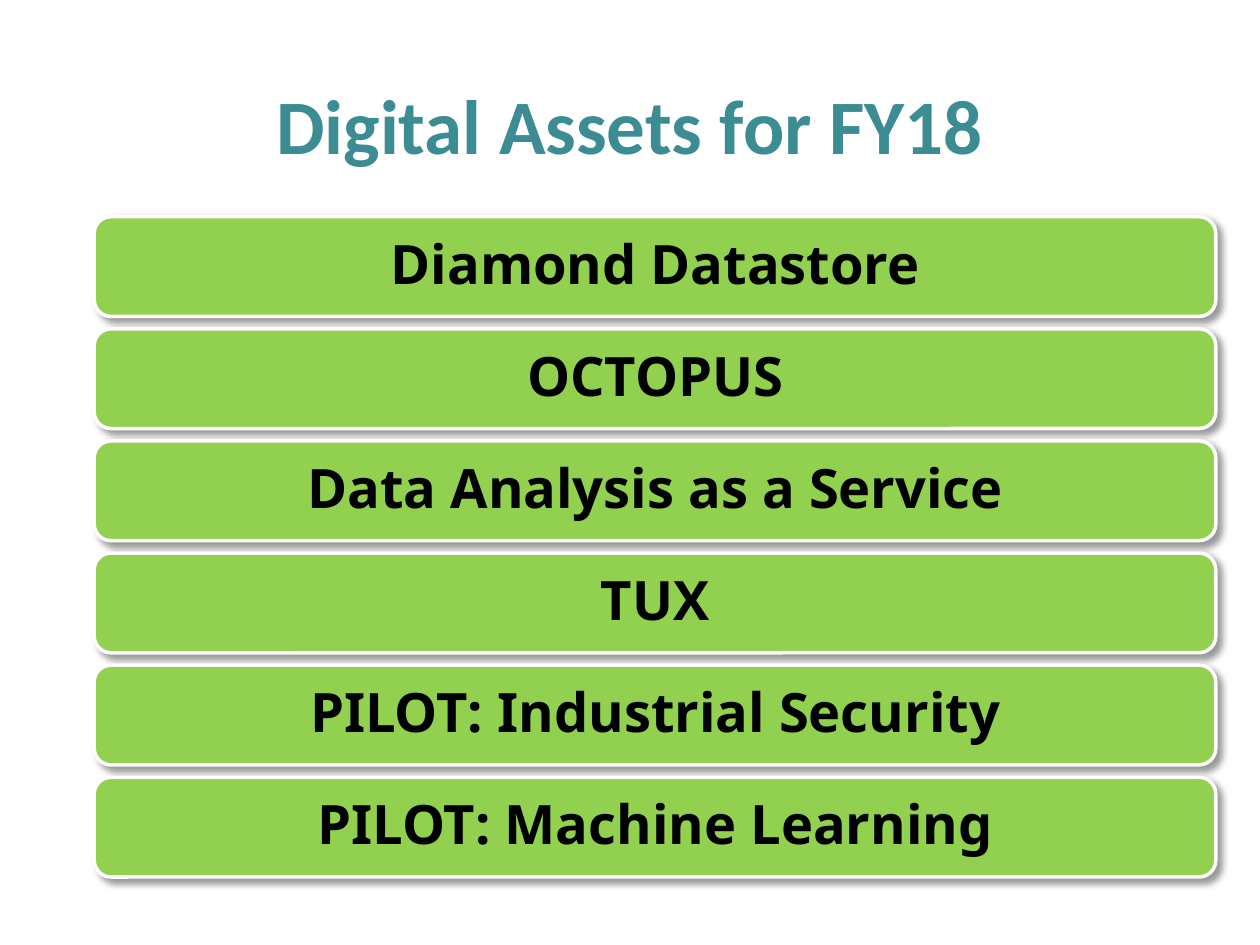
import pptx
import pptx.util
import pptx.dml.color
import pptx.enum.shapes
import pptx.enum.text
import pptx.oxml
import pptx.oxml.ns
from pptx.util import Cm

# Content
TITLE = "Digital Assets for FY18"
ASSETS = [
    "Diamond Datastore",
    "OCTOPUS",
    "Data Analysis as a Service",
    "TUX",
    "PILOT: Industrial Security",
    "PILOT: Machine Learning",
]

# Colours
TEAL = pptx.dml.color.RGBColor(0x3C, 0x8C, 0x93)
GREEN = pptx.dml.color.RGBColor(0x92, 0xD0, 0x50)
WHITE = pptx.dml.color.RGBColor(0xFF, 0xFF, 0xFF)
BLACK = pptx.dml.color.RGBColor(0x00, 0x00, 0x00)

# Bar grid
BAR_LEFT, BAR_TOP = Cm(1.9), Cm(4.37)
BAR_WIDTH, BAR_HEIGHT = Cm(22.61), Cm(2.01)
BAR_STEP = Cm(2.26)
BAR_INSET = Cm(0.33)

SHADOW = (
    '<a:outerShdw %s blurRad="50800" dist="38100" dir="2700000" rotWithShape="0">'
    '<a:srgbClr val="000000"><a:alpha val="40000"/></a:srgbClr></a:outerShdw>'
    % pptx.oxml.ns.nsdecls("a")
)


def write(tf, text, font, size, color, spacing=None):
    """Write one bold, centred line in the middle of a frame."""
    tf.word_wrap = True
    tf.auto_size = pptx.enum.text.MSO_AUTO_SIZE.NONE
    tf.vertical_anchor = pptx.enum.text.MSO_ANCHOR.MIDDLE
    p = tf.paragraphs[0]
    p.alignment = pptx.enum.text.PP_ALIGN.CENTER
    if spacing:
        p.line_spacing = spacing
    r = p.add_run()
    r.text = text
    r.font.name = font
    r.font.size = pptx.util.Pt(size)
    r.font.bold = True
    r.font.color.rgb = color


def add_bar(s, top, text):
    """Add a rounded bar with a soft shadow and its label."""
    sp = s.shapes.add_shape(
        pptx.enum.shapes.MSO_SHAPE.ROUNDED_RECTANGLE,
        BAR_LEFT, top, BAR_WIDTH, BAR_HEIGHT)
    sp.fill.solid()
    sp.fill.fore_color.rgb = GREEN
    sp.line.color.rgb = WHITE
    sp.line.width = pptx.util.Pt(2)
    sp.shadow.inherit = False
    effects = sp.element.spPr.find(pptx.oxml.ns.qn("a:effectLst"))
    effects.append(pptx.oxml.parse_xml(SHADOW))
    tf = sp.text_frame
    tf.margin_left = tf.margin_right = BAR_INSET
    tf.margin_top = tf.margin_bottom = BAR_INSET
    write(tf, text, font="Noto Sans", size=31, color=BLACK, spacing=0.9)


def main():
    prs = pptx.Presentation()
    prs.slide_width, prs.slide_height = Cm(25.4), Cm(19.05)
    s = prs.slides.add_slide(prs.slide_layouts[5])

    # Title
    title = s.shapes.title
    title.left, title.top = Cm(0), Cm(0.91)
    title.width, title.height = prs.slide_width, Cm(3.18)
    write(title.text_frame, TITLE, font="Calibri", size=44, color=TEAL)

    # Stack of bars
    for i, asset in enumerate(ASSETS):
        add_bar(s, BAR_TOP + i * BAR_STEP, asset)

    prs.save("out.pptx")


if __name__ == "__main__":
    main()
